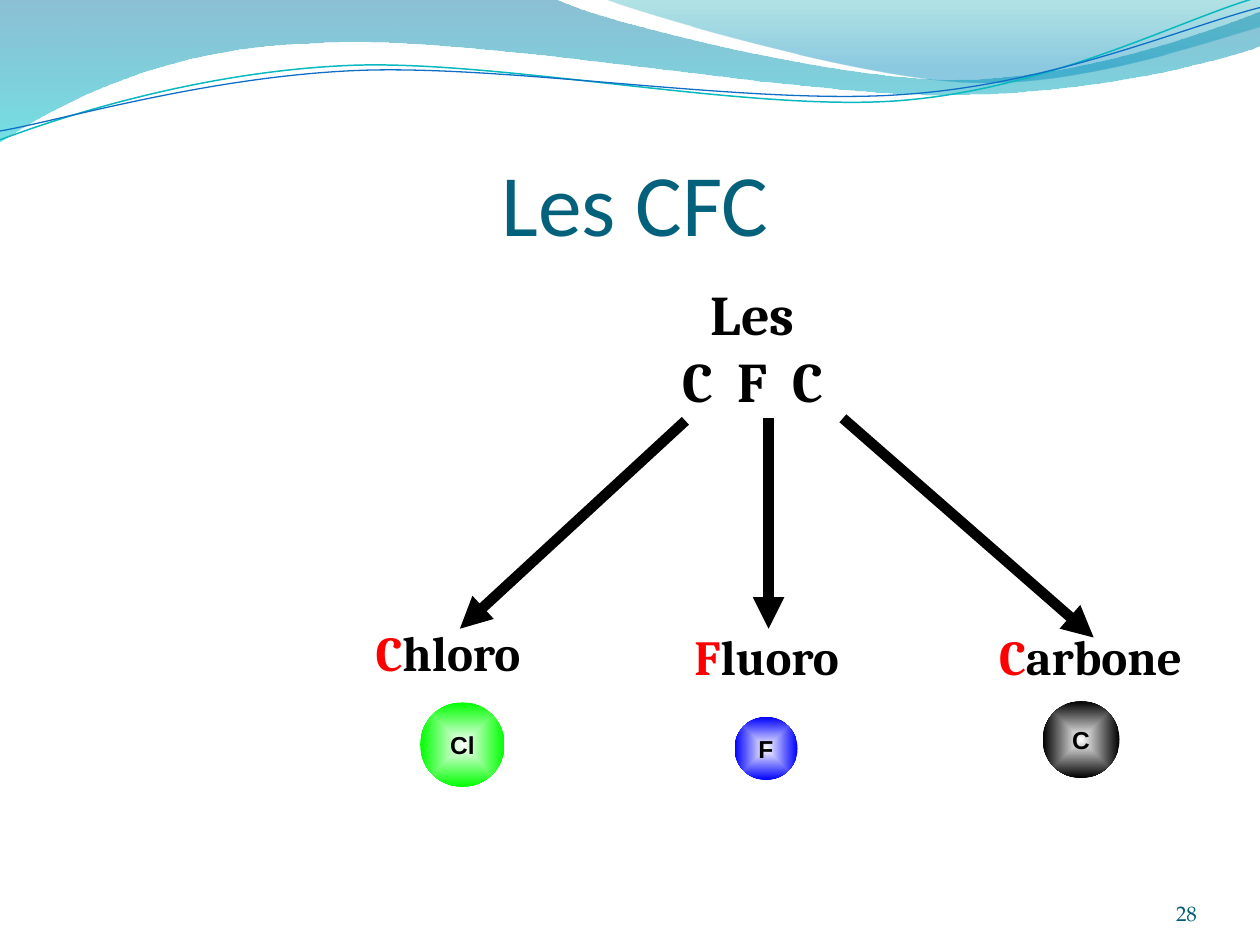
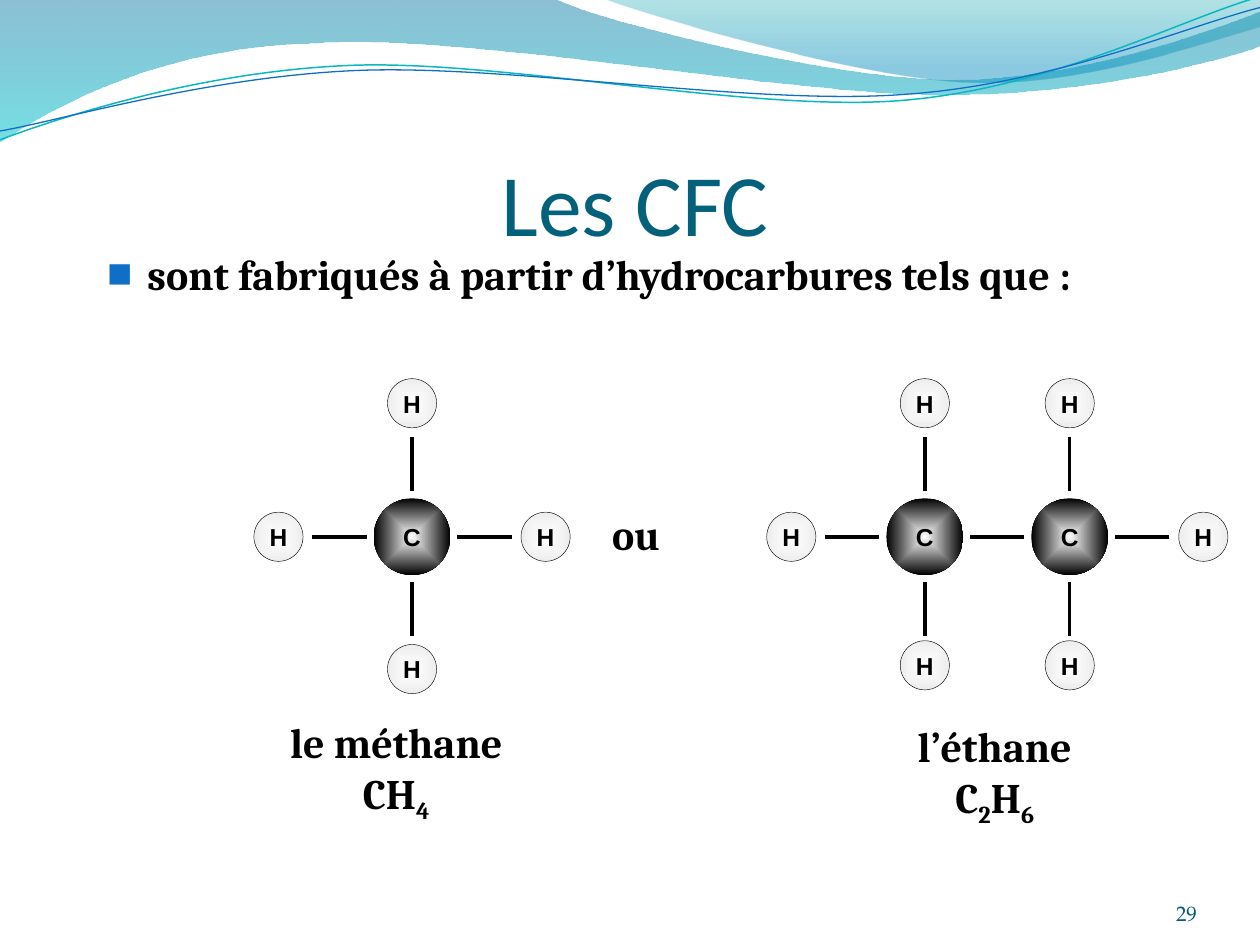
import pptx
import pptx.util
import pptx.dml.color
import pptx.enum.shapes
import pptx.enum.text
import pptx.oxml
import pptx.oxml.ns

Inches, Pt, qn = pptx.util.Inches, pptx.util.Pt, pptx.oxml.ns.qn
Align = pptx.enum.text.PP_ALIGN
Anchor = pptx.enum.text.MSO_ANCHOR

BLACK, RED, WHITE, BLUE = "000000", "FF0000", "FFFFFF", "0F6FC6"
TEAL, NUMBER = "04617B", "045D75"
SERIF = "Cambria"
FLOW = '<a:lin ang="5400000" scaled="0"/>'
GLOW = ('<a:path path="shape"><a:fillToRect l="50000" t="50000" '
        'r="50000" b="50000"/></a:path>')

# Each wave is a start point, then points (2 numbers) and curves (6 numbers).
BAND = [(0, 0), (4.4, -.01), (4.76, .17, 6.64, .63, 7.58, .63),
        (8.53, .63, 9.58, .26, 10, .09), (10.01, .36),
        (9.83, .44, 8.7, .76, 7.46, .75), (6.22, .75, 3.82, .28, 2.57, .34),
        (1.29, .36, .46, .83, -.01, 1.13)]
CREST = [(4.79, -.01), (5.09, .11, 6.82, .62, 7.69, .65),
         (8.56, .69, 9.61, .32, 10, .21), (10, 0)]
CYAN_LINE = [(0, 1.11), (.48, .93, 1.58, .57, 2.77, .52),
             (3.95, .47, 5.93, .89, 7.13, .8), (8.33, .71, 9.38, .15, 9.98, -.02)]
BLUE_LINE = [(0, 1.04), (.47, .96, 1.64, .61, 2.83, .56),
             (4.03, .51, 5.97, .84, 7.17, .75), (8.36, .67, 9.41, .21, 10, .06)]


def rgb(code):
    return pptx.dml.color.RGBColor.from_string(code)


def place(shape, left, top, width, height):
    shape.left, shape.top = Inches(left), Inches(top)
    shape.width, shape.height = Inches(width), Inches(height)


def blend(shape, stops, course):
    """Fill with a gradient of (position, colour, opacity) stops, in percent."""
    marks = "".join(
        f'<a:gs pos="{pos * 1000}"><a:srgbClr val="{code}">'
        f'<a:alpha val="{alpha * 1000}"/></a:srgbClr></a:gs>'
        for pos, code, alpha in stops)
    shape.fill.solid()
    props = shape.element.spPr
    props.replace(props.find(qn("a:solidFill")), pptx.oxml.parse_xml(
        f'<a:gradFill {pptx.oxml.ns.nsdecls("a")} rotWithShape="1">'
        f'<a:gsLst>{marks}</a:gsLst>{course}</a:gradFill>'))


def bend(shape, wave, left, top):
    """Turn the straight legs of a freeform into the curves of its wave."""
    legs = list(shape.element.iter(qn("a:lnTo")))
    for leg, part in zip(legs, wave[1:]):
        if len(part) == 2:
            continue
        curve = leg.makeelement(qn("a:cubicBezTo"), {})
        for x, y in zip(part[::2], part[1::2]):
            knot = {"x": str(round((x - left) * 1000)),
                    "y": str(round((y - top) * 1000))}
            curve.append(leg.makeelement(qn("a:pt"), knot))
        leg.getparent().replace(leg, curve)


def draw_wave(slide, wave, stops=None, line=None, width=0):
    ends = [part[-2:] for part in wave]
    points = [(round(x * 1000), round(y * 1000)) for x, y in ends]
    pen = slide.shapes.build_freeform(*points[0], scale=Inches(1) / 1000)
    pen.add_line_segments(points[1:], close=bool(stops))
    shape = pen.convert_to_shape()
    bend(shape, wave, min(x for x, y in ends), min(y for x, y in ends))
    shape.shadow.inherit = False
    if stops:
        blend(shape, stops, FLOW)
        shape.line.fill.background()
    else:
        shape.fill.background()
        shape.line.color.rgb = rgb(line)
        shape.line.width = Pt(width)
    return shape


def deck_waves(deck, slide):
    """Draw the waves and move them to the master, which all slides share."""
    waves = [draw_wave(slide, BAND, [(0, "0074A1", 45), (100, "00C6CF", 55)]),
             draw_wave(slide, CREST, [(0, "00A1A9", 30), (80, "008BBF", 45)]),
             draw_wave(slide, CYAN_LINE, line="0AB8BF", width=.85),
             draw_wave(slide, BLUE_LINE, line=BLUE, width=.75)]
    tree = deck.slide_master.shapes.element
    for i, wave in enumerate(waves):
        tree.insert(2 + i, wave.element)


def style(para, size, name=SERIF, color=BLACK, bold=True, align=Align.CENTER):
    font = para.font
    font.size, font.name, font.bold = Pt(size), name, bold
    font.color.rgb = rgb(color)
    para.alignment = align


def add_text(slide, box, lines, size, **looks):
    """Write lines, each a list of runs; a run of digits is set low."""
    shape = slide.shapes.add_textbox(*map(Inches, box))
    frame = shape.text_frame
    frame.word_wrap = True
    for i, runs in enumerate(lines):
        para = frame.paragraphs[0] if i == 0 else frame.add_paragraph()
        for text in runs:
            run = para.add_run()
            run.text = text
            if text.isdigit() and len(runs) > 1:
                run._r.get_or_add_rPr().set("baseline", "-25000")
        style(para, size, **looks)
    return frame


def add_line(slide, start, end, width, arrow=False):
    line = slide.shapes.add_connector(
        pptx.enum.shapes.MSO_CONNECTOR.STRAIGHT, *map(Inches, start + end))
    line.line.color.rgb = rgb(BLACK)
    line.line.width = Pt(width)
    props = line.element.spPr
    if arrow:
        props.find(qn("a:ln")).append(
            props.makeelement(qn("a:tailEnd"), {"type": "triangle"}))
    props.append(props.makeelement(qn("a:effectLst"), {}))


def add_atom(slide, x, y, size, symbol, color, edge=False):
    """Draw a shaded ball centred on x, y."""
    ball = slide.shapes.add_shape(
        pptx.enum.shapes.MSO_SHAPE.OVAL, Inches(x - size / 2),
        Inches(y - size / 2), Inches(size), Inches(size))
    ball.shadow.inherit = False
    blend(ball, [(0, WHITE, 100), (100, color, 100)], GLOW)
    if edge:
        ball.line.color.rgb = rgb(BLACK)
        ball.line.width = Pt(.25)
    else:
        ball.line.fill.background()
    frame = ball.text_frame
    frame.word_wrap = False
    frame.vertical_anchor = Anchor.MIDDLE
    frame.text = symbol
    style(frame.paragraphs[0], 14, "Arial")


def add_page(deck, layout, number):
    """Add a slide with the shared title and page number."""
    slide = deck.slides.add_slide(deck.slide_layouts[layout])
    title = slide.shapes.title
    place(title, .5, .77, 9.08, 1.25)
    frame = title.text_frame
    frame.text = "Les CFC"
    frame.auto_size = pptx.enum.text.MSO_AUTO_SIZE.NONE
    frame.vertical_anchor = Anchor.BOTTOM
    frame.margin_left = frame.margin_right = frame.margin_bottom = 0
    style(frame.paragraphs[0], 50, "Calibri", TEAL, False)
    foot = add_text(slide, (8.67, 6.95, .83, .4), [[number]], 12, bold=False,
                    name="TeX Gyre Pagella", color=NUMBER, align=Align.RIGHT)
    foot.vertical_anchor = Anchor.BOTTOM
    foot.margin_left = foot.margin_right = foot.margin_top = foot.margin_bottom = 0
    return slide


def add_branch(slide, start, end, word, box, ball):
    """Draw an arrow to a word with a red initial, and its atom below."""
    add_line(slide, start, end, 6, arrow=True)
    frame = add_text(slide, box, [[word[0], word[1:]]], 28)
    frame.vertical_anchor = Anchor.MIDDLE
    para = frame.paragraphs[0]
    para.line_spacing = Pt(14)
    para.runs[0].font.color.rgb = rgb(RED)
    add_atom(slide, *ball)


def names_slide(deck):
    slide = add_page(deck, 5, "28")
    add_text(slide, (2.56, 2.17, 6.83, 1.09), [["Les"], ["C  F  C"]], 32)
    add_branch(slide, (5.44, 3.34), (3.65, 4.99), "Chloro",
               (2.58, 5.16, 1.95, .3), (3.67, 5.91, .67, "Cl", "00FF00"))
    add_branch(slide, (6.1, 3.32), (6.1, 4.99), "Fluoro",
               (5.11, 5.19, 1.95, .3), (6.08, 5.94, .5, "F", "0000FF"))
    add_branch(slide, (6.69, 3.32), (8.68, 5.06), "Carbone",
               (7.68, 5.19, 1.95, .3), (8.58, 5.87, .61, "C", BLACK))
    return slide


def add_molecule(slide, x, y, count, foot):
    """Draw a chain of carbons from x, y, with hydrogens foot below it."""
    for i in range(count):
        mid = x + i * 1.15
        first, last = i == 0, i == count - 1
        sides = [(0, -1, 1.06), (0, 1, foot), (1, 0, 1.06 if last else 0)]
        if first:
            sides.append((-1, 0, 1.06))
        add_atom(slide, mid, y, .61, "C", BLACK)
        for across, down, reach in sides:
            ends = [(mid + across * far, y + down * far) for far in (.36, .79)]
            add_line(slide, *ends, 2)
            if reach:
                add_atom(slide, mid + across * reach, y + down * reach,
                         .39, "H", "EDEDED", edge=True)


def add_lead(body, text):
    """Fill the body placeholder with one square-bulleted line."""
    place(body, .75, 1.92, 8.67, .5)
    frame = body.text_frame
    frame.text = text
    frame.auto_size = pptx.enum.text.MSO_AUTO_SIZE.NONE
    para = frame.paragraphs[0]
    style(para, 24, align=Align.LEFT)
    para.space_before = Pt(0)
    props = body.element.find(".//" + qn("a:pPr"))
    props.set("marL", str(Inches(.32)))
    props.set("indent", str(Inches(-.32)))
    names = pptx.oxml.ns.nsdecls("a")
    marks = (f'<a:buClr {names}><a:srgbClr val="{BLUE}"/></a:buClr>',
             f'<a:buChar {names} char="■"/>')
    at = props.index(props.find(qn("a:defRPr")))
    for i, mark in enumerate(marks):
        props.insert(at + i, pptx.oxml.parse_xml(mark))


def sources_slide(deck):
    slide = add_page(deck, 1, "29")
    add_lead(slide.placeholders[1],
             "sont fabriqués à partir d’hydrocarbures tels que :")
    add_molecule(slide, 3.27, 4.26, 1, 1.05)
    add_text(slide, (1.73, 5.64, 2.83, 1.02), [["le méthane"], ["CH", "4"]], 24)
    add_text(slide, (4.76, 3.99, .97, .46), [["ou"]], 24, align=Align.LEFT)
    add_molecule(slide, 7.34, 4.26, 2, 1.02)
    add_text(slide, (6.48, 5.67, 2.83, 1.02),
             [["l’éthane"], ["C", "2", "H", "6"]], 24)


def main():
    deck = pptx.Presentation()
    deck.slide_width, deck.slide_height = Inches(10), Inches(7.5)
    deck_waves(deck, names_slide(deck))
    sources_slide(deck)
    deck.save("out.pptx")


if __name__ == "__main__":
    main()
